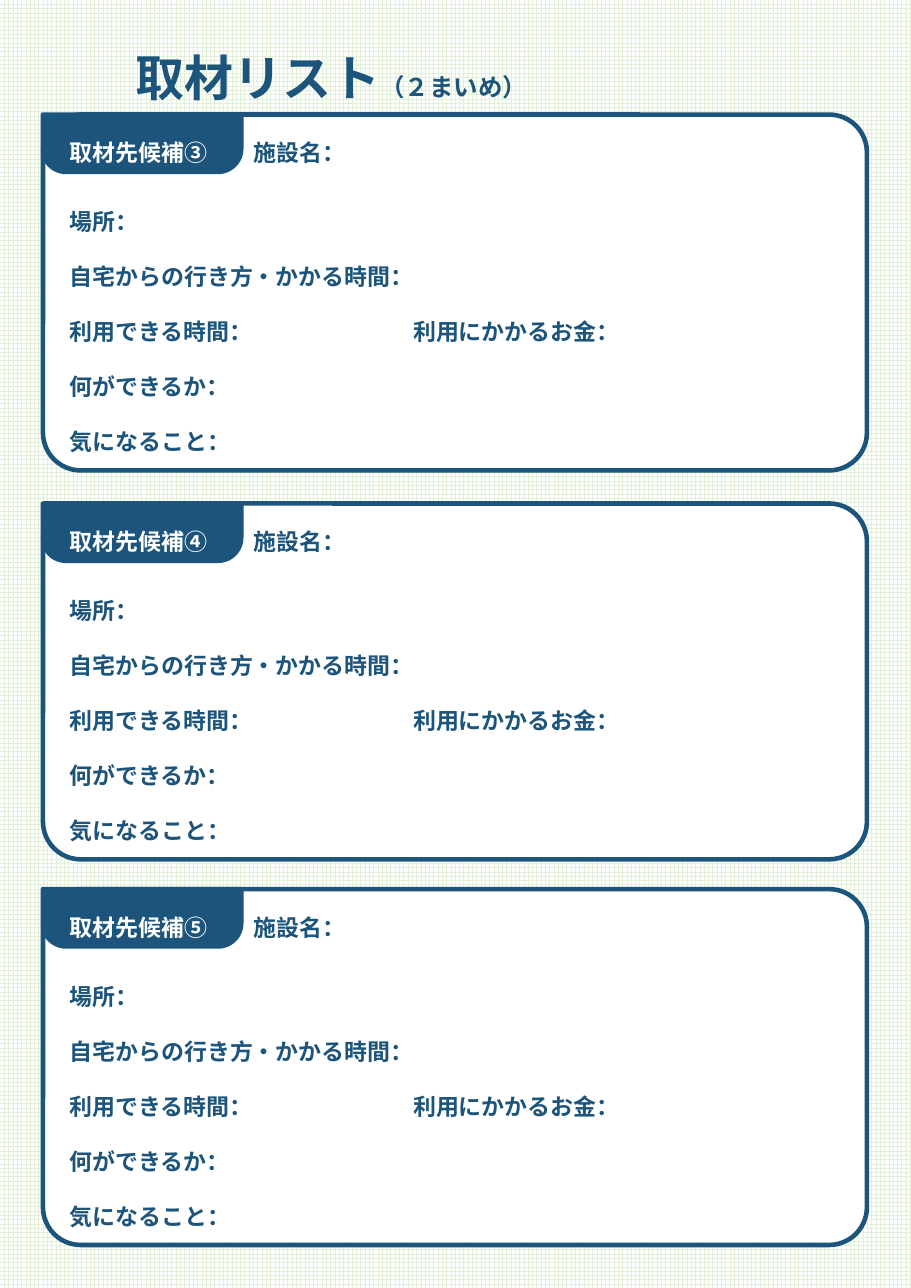
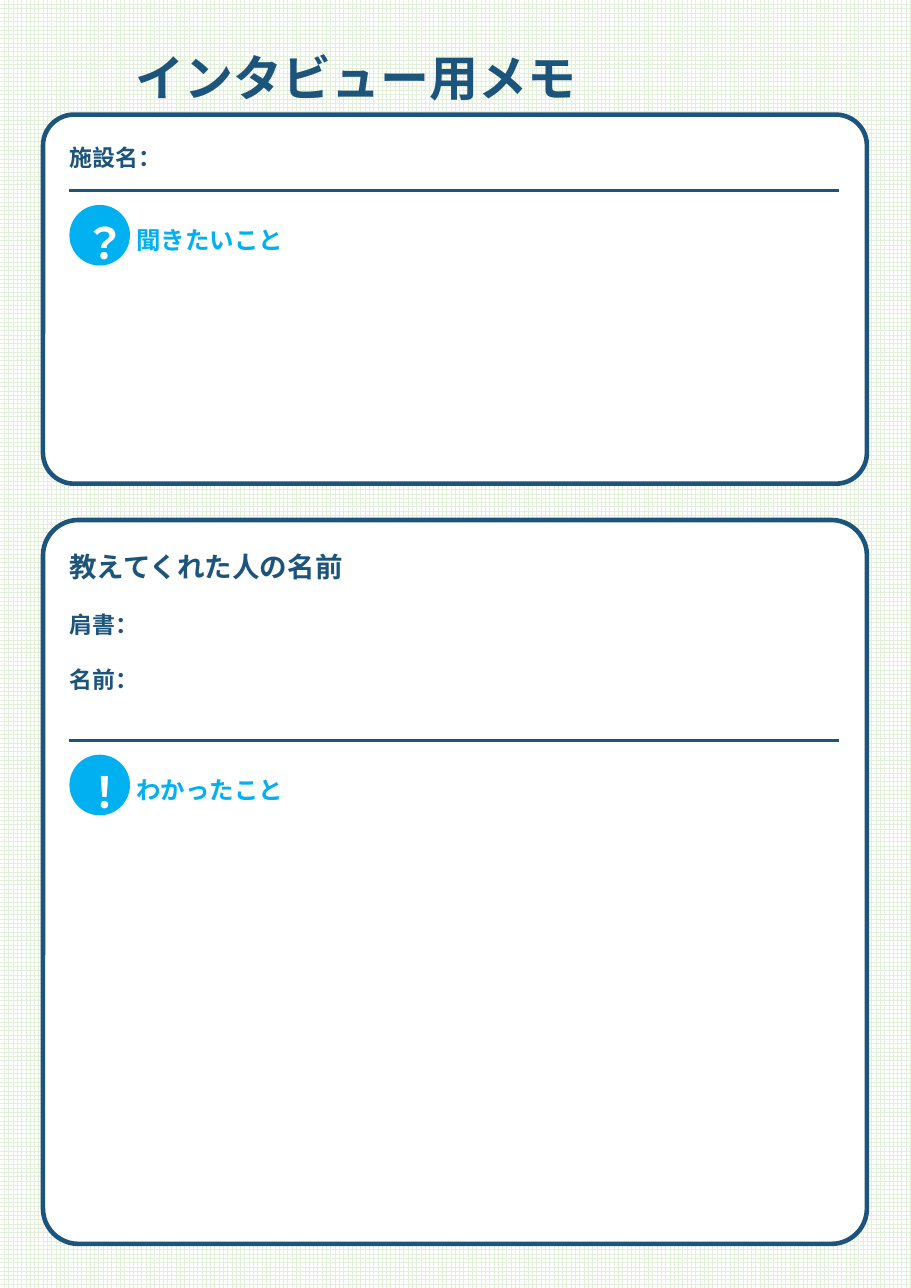
from pptx import Presentation
from pptx.dml.color import RGBColor
from pptx.enum.dml import MSO_PATTERN
from pptx.enum.shapes import MSO_CONNECTOR, MSO_SHAPE
from pptx.oxml.ns import qn
from pptx.util import Inches, Pt
from lxml.etree import SubElement

FONT = "Noto Sans CJK JP"
NAVY, SKY, WHITE, PALE_GREEN = "1C547B", "00B0F0", "FFFFFF", "E2F0D9"
CARD_X, CARD_W = 0.39, 7.48
TEXT_X, TEXT_W = 0.63, 6.99
rgb = RGBColor.from_string


def add_box(s, kind, box, fill, line=None, adj=()):
    sp = s.shapes.add_shape(kind, *map(Inches, box))
    sp.shadow.inherit = False
    sp.fill.solid()
    sp.fill.fore_color.rgb = rgb(fill)
    if line:
        sp.line.color.rgb = rgb(line)
        sp.line.width = Pt(3)
    else:
        sp.line.fill.background()
    for i, value in enumerate(adj):
        sp.adjustments[i] = value


def add_text(s, box, paragraphs, tab=None):
    """Each paragraph is (format dict, [(text, size, colour), ...])."""
    tf = s.shapes.add_textbox(*map(Inches, box)).text_frame
    tf.word_wrap = True
    for side in ("left", "top", "right", "bottom"):
        setattr(tf, f"margin_{side}", 0)
    for i, (fmt, runs) in enumerate(paragraphs):
        p = tf.paragraphs[0] if i == 0 else tf.add_paragraph()
        if tab:
            tabs = SubElement(p._p.get_or_add_pPr(), qn("a:tabLst"))
            SubElement(tabs, qn("a:tab"), pos=str(Inches(tab[i])), algn="l")
        p.line_spacing = Pt(round(1.27 * runs[0][1]))
        for name, value in fmt.items():
            setattr(p, name, value)
        for text, size, colour in runs:
            r = p.add_run()
            r.text = text
            for name, value in {"size": Pt(size), "bold": True, "name": FONT}.items():
                setattr(r.font, name, value)
            r.font.color.rgb = rgb(colour)
            SubElement(r._r.get_or_add_rPr(), qn("a:ea"), typeface=FONT)


prs = Presentation()
prs.slide_width, prs.slide_height = Inches(8.27), Inches(11.69)
bg = prs.slide_master.background.fill
bg.patterned()
bg.pattern = MSO_PATTERN.LARGE_GRID
bg.fore_color.rgb, bg.back_color.rgb = rgb(PALE_GREEN), rgb(WHITE)

titles = [
    [("取材リスト", 32, NAVY), ("（２まいめ）", 16, NAVY)],
    [("インタビュー用メモ", 32, NAVY)],
]
slides = []
for runs in titles:
    s = prs.slides.add_slide(prs.slide_layouts[6])
    add_text(s, (1.23, 0.4, 6.77, 0.71), [({}, runs)])
    slides.append(s)
list_slide, memo_slide = slides

# Candidate cards
questions = [
    "場所：",
    "自宅からの行き方・かかる時間：",
    "利用できる時間：\t利用にかかるお金：",
    "何ができるか：",
    "気になること：",
]
row_pitch = [36, 45, 36, 36, 36, 36]
row_tabs = [1.67] + [3.12] * len(questions)
for number, y in zip("③④⑤", (1.04, 4.57, 8.07)):
    add_box(list_slide, MSO_SHAPE.ROUNDED_RECTANGLE, (CARD_X, y, CARD_W, 3.23),
            WHITE, NAVY, [0.106])
    add_box(list_slide, MSO_SHAPE.ROUND_2_SAME_RECTANGLE, (CARD_X, y, 1.8, 0.52),
            NAVY, NAVY, [0, 0.405])
    rows = [[(f"取材先候補{number}\t", 15, WHITE), ("施設名：", 15, NAVY)]]
    rows += [[(question, 15, NAVY)] for question in questions]
    add_text(list_slide, (TEXT_X, y - 0.03, TEXT_W, 3.19),
             [({"line_spacing": Pt(pitch)}, row) for pitch, row in zip(row_pitch, rows)],
             row_tabs)

# Interview panels: top, height, corner, rule position, mark, heading, text top, text
gap = {"space_before": Pt(17)}
panels = [
    (1.04, 3.35, 0.084, 1.73, "？", "聞きたいこと", 1.29,
     [({}, [("施設名：", 15, NAVY)])]),
    (4.72, 6.57, 0.049, 6.72, "！", "わかったこと", 4.97,
     [({}, [("教えてくれた人の名前", 18, NAVY)]),
      (gap, [("肩書：", 15, NAVY)]),
      (gap, [("名前：", 15, NAVY)])]),
]
for y, height, corner, rule_y, mark, heading, text_y, paragraphs in panels:
    add_box(memo_slide, MSO_SHAPE.ROUNDED_RECTANGLE, (CARD_X, y, CARD_W, height),
            WHITE, NAVY, [corner])
    rule = memo_slide.shapes.add_connector(
        MSO_CONNECTOR.STRAIGHT, Inches(TEXT_X), Inches(rule_y),
        Inches(TEXT_X + TEXT_W), Inches(rule_y))
    rule.line.color.rgb = rgb(NAVY)
    rule.line.width = Pt(2)
    SubElement(rule._element.spPr, qn("a:effectLst"))
    add_box(memo_slide, MSO_SHAPE.OVAL, (TEXT_X, rule_y + 0.13, 0.55, 0.55), SKY)
    add_text(memo_slide, (0.76, rule_y + 0.2, 0.4, 0.47), [({}, [(mark, 28, WHITE)])])
    add_text(memo_slide, (1.24, rule_y + 0.3, 5.22, 0.39), [({}, [(heading, 16, SKY)])])
    add_text(memo_slide, (TEXT_X, text_y, TEXT_W, rule_y - text_y - 0.1), paragraphs)

prs.save("out.pptx")
